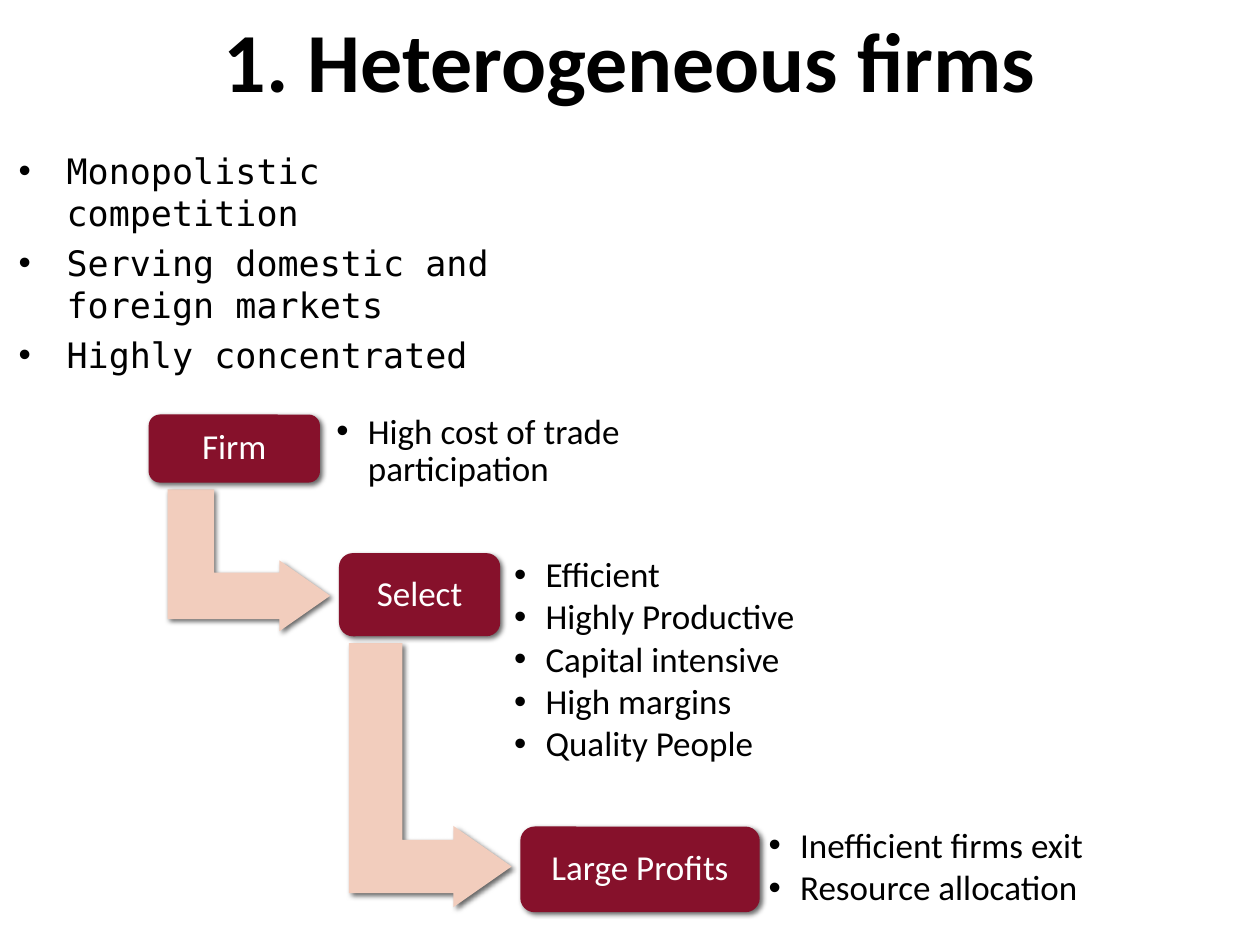
from dataclasses import dataclass
from itertools import pairwise

from lxml.etree import SubElement
from pptx import Presentation
from pptx.dml.color import RGBColor
from pptx.enum.shapes import MSO_SHAPE
from pptx.enum.text import MSO_ANCHOR, PP_ALIGN
from pptx.oxml.ns import qn
from pptx.util import Inches, Pt

COLUMNS, ROWS = 100, 75
SLIDE_WIDTH, SLIDE_HEIGHT = Inches(10), Inches(7.5)


@dataclass(frozen=True)
class Theme:
    """Colours, fonts and type sizes of the slide."""

    ink: str = "000000"
    card: str = "86112B"
    card_text: str = "FFFFFF"
    arrow: str = "F2CDBD"
    main_font: str = "Calibri"
    mono_font: str = "DejaVu Sans Mono"
    title_size: int = 48
    body_size: int = 20


@dataclass(frozen=True)
class Box:
    """A rectangle in grid columns and rows."""

    left: float
    top: float
    width: float
    height: float

    @property
    def right(self):
        """Return the right edge."""
        return self.left + self.width

    @property
    def bottom(self):
        """Return the bottom edge."""
        return self.top + self.height

    def place(self, part):
        """Move a part given relative to this box onto the slide grid."""
        return Box(self.left + part.left, self.top + part.top, part.width, part.height)

    def quarter_turned(self):
        """Return the frame that covers this box after a 90 degree turn."""
        shift = (self.width - self.height) / 2
        return Box(self.left + shift, self.top - shift, self.height, self.width)

    def lengths(self):
        """Return position and size as slide lengths."""
        column, row = SLIDE_WIDTH / COLUMNS, SLIDE_HEIGHT / ROWS
        return [int(share * unit) for share, unit in zip(
            (self.left, self.top, self.width, self.height), (column, row, column, row))]


THEME = Theme()
STEP_FRAME = dict.fromkeys(
    ("margin_left", "margin_right", "margin_top", "margin_bottom"), Inches(0.08)
) | {"word_wrap": True, "vertical_anchor": MSO_ANCHOR.MIDDLE}
STEPS = [
    ("Firm", Box(0, 0.6, 13.6, 5.4), Box(14.1, 0, 28.3, 7.1),
     ["High cost of trade participation"]),
    ("Select", Box(15.1, 11.6, 12.8, 6.6), Box(28.2, 12.2, 42.4, 15.9),
     ["Efficient", "Highly Productive", "Capital intensive", "High margins", "Quality People"]),
    ("Large Profits", Box(29.5, 33.3, 19, 6.8), Box(48.4, 33.5, 32.1, 6.2),
     ["Inefficient firms exit", "Resource allocation"]),
]


def apply(target, values):
    """Set each named attribute on the target."""
    for name, value in values.items():
        setattr(target, name, value)


def write(frame, lines, font, frame_values, paragraph_values, indent=0, gap_before=0):
    """Fill a text frame with evenly formatted lines, bulleted when indented."""
    apply(frame, frame_values)
    for index, line in enumerate(lines):
        paragraph = frame.paragraphs[0] if index == 0 else frame.add_paragraph()
        apply(paragraph, paragraph_values)
        if index and gap_before:
            paragraph.space_before = Pt(gap_before)
        if indent:
            properties = paragraph._p.get_or_add_pPr()
            properties.set("marL", str(Inches(indent)))
            properties.set("indent", str(-Inches(indent)))
            SubElement(properties, qn("a:buFont"), typeface="Arial")
            SubElement(properties, qn("a:buChar"), char="•")
        run = paragraph.add_run()
        run.text = line
        apply(run.font, {key: value for key, value in font.items() if key != "color"})
        run.font.color.rgb = RGBColor.from_string(font["color"])


def font_of(name=THEME.main_font, size=THEME.body_size, color=THEME.ink, bold=False):
    """Return the format values of a font."""
    return {"name": name, "size": Pt(size), "color": color, "bold": bold}


def add_block(slide, kind, box, color):
    """Add a borderless filled shape with a soft shadow."""
    block = slide.shapes.add_shape(kind, *box.lengths())
    block.fill.solid()
    block.fill.fore_color.rgb = RGBColor.from_string(color)
    block.line.fill.background()
    block.shadow.inherit = False
    effects = block._element.spPr.find(qn("a:effectLst"))
    shadow = SubElement(effects, qn("a:outerShdw"), blurRad=str(Pt(3)), dist=str(Pt(2)),
                        dir="2700000", algn="ctr", rotWithShape="0")
    shade = SubElement(shadow, qn("a:srgbClr"), val=THEME.ink)
    SubElement(shade, qn("a:alpha"), val="60000")
    return block


def add_title(slide, box, text):
    """Place the centred heading."""
    heading = slide.shapes.add_textbox(*box.lengths())
    write(heading.text_frame, [text], font_of(size=THEME.title_size, bold=True),
          {"word_wrap": True}, {"alignment": PP_ALIGN.CENTER})


def add_market_traits(slide, box, traits):
    """Place the bulleted list of market traits."""
    listing = slide.shapes.add_textbox(*box.lengths())
    write(listing.text_frame, traits, font_of(name=THEME.mono_font),
          {"word_wrap": True}, {}, indent=0.38, gap_before=4.6)


def add_turn(slide, card, next_card):
    """Place the bent arrow that leads from one card to the next."""
    width, top = 12.9, card.bottom + 0.55
    area = Box(next_card.left - 0.7 - width, top, width, next_card.bottom - 0.4 - top)
    turn = add_block(slide, MSO_SHAPE.BENT_UP_ARROW, area.quarter_turned(), THEME.arrow)
    turn.rotation = 90
    for index, share in enumerate((0.328, 0.25, 0.358)):
        turn.adjustments[index] = share


def add_step(slide, card, details_box, label, details):
    """Place one labelled card and its details."""
    step = add_block(slide, MSO_SHAPE.ROUNDED_RECTANGLE, card, THEME.card)
    write(step.text_frame, [label], font_of(color=THEME.card_text), STEP_FRAME,
          {"alignment": PP_ALIGN.CENTER, "line_spacing": 0.9})
    notes = slide.shapes.add_textbox(*details_box.lengths())
    write(notes.text_frame, details, font_of(), STEP_FRAME,
          {"line_spacing": 0.9, "space_after": Pt(2.6)}, indent=0.25)


def add_selection_steps(slide, region, steps):
    """Place the descending steps and the arrows between them."""
    cards = [region.place(card) for _, card, _, _ in steps]
    for card, next_card in pairwise(cards):
        add_turn(slide, card, next_card)
    for card, (label, _, details_box, details) in zip(cards, steps):
        add_step(slide, card, region.place(details_box), label, details)


def main():
    """Build and save the slide."""
    deck = Presentation()
    apply(deck, {"slide_width": SLIDE_WIDTH, "slide_height": SLIDE_HEIGHT})
    slide = deck.slides.add_slide(deck.slide_layouts[6])
    add_title(slide, Box(0, 0.2, COLUMNS, 6.8), "1. Heterogeneous firms")
    add_market_traits(slide, Box(0.5, 11.4, 43.1, 15.7), [
        "Monopolistic competition", "Serving domestic and foreign markets", "Highly concentrated"])
    add_selection_steps(slide, Box(11.8, 32.3, 80.6, 40.1), STEPS)
    deck.save("out.pptx")


if __name__ == "__main__":
    main()
